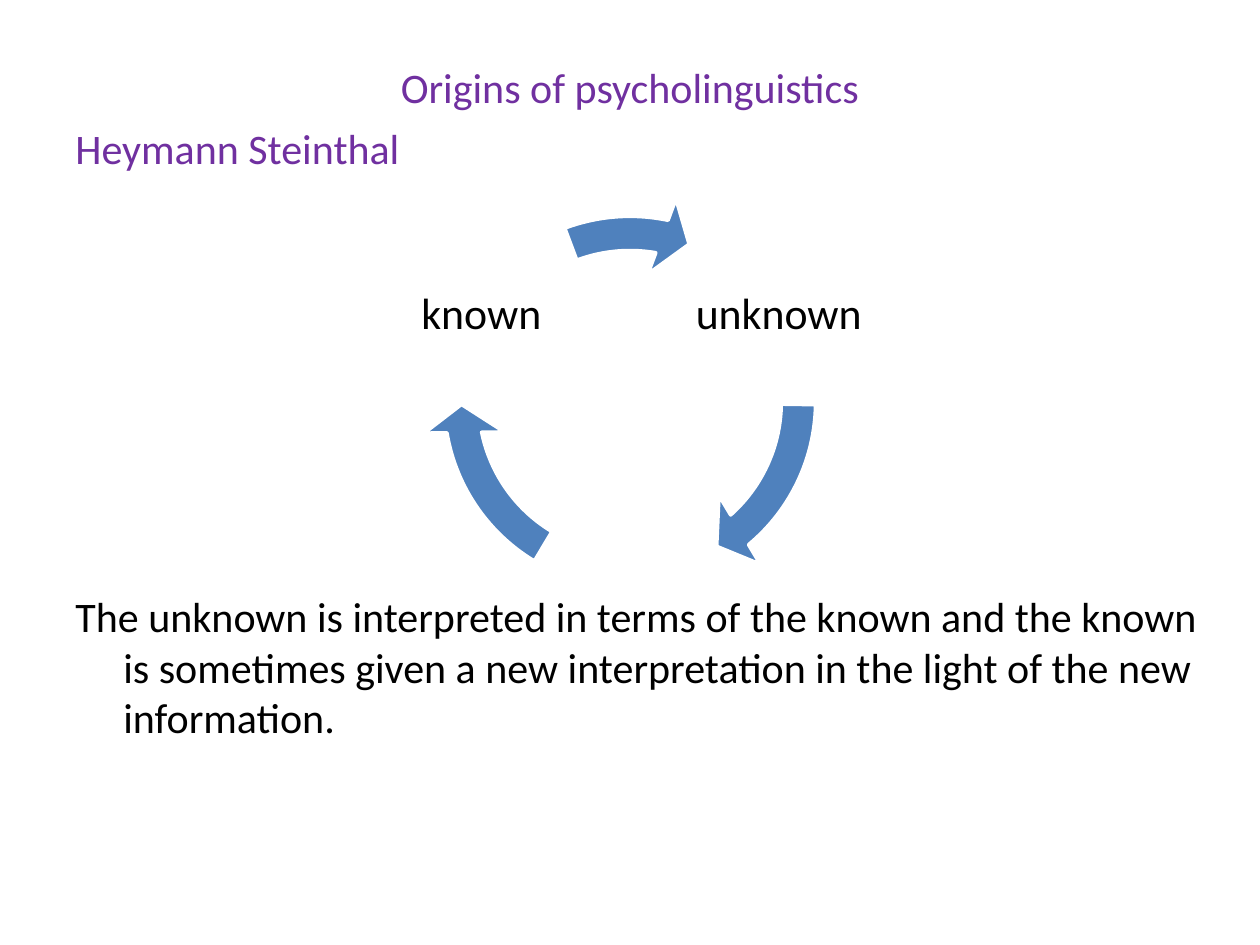
from pptx import Presentation
from pptx.dml.color import RGBColor
from pptx.enum.shapes import MSO_SHAPE
from pptx.enum.text import MSO_ANCHOR, PP_ALIGN
from pptx.util import Inches, Pt

ARROW = MSO_SHAPE.CIRCULAR_ARROW
MIDDLE, TOP = MSO_ANCHOR.MIDDLE, MSO_ANCHOR.TOP
CENTER, LEFT = PP_ALIGN.CENTER, PP_ALIGN.LEFT
FONT = "Calibri"
PURPLE, BLACK, BLUE, WHITE = "7030A0", "000000", "4F81BD", "FFFFFF"

# Content
TITLE = "Origins of psycholinguistics"
# text, colour, space before in points (the gap leaves room for the cycle)
BODY = [
    ("Heymann Steinthal", PURPLE, 0),
    ("The unknown is interpreted in terms of the known and the known is "
     "sometimes given a new interpretation in the light of the new "
     "information.", BLACK, 239),
]
# label, side of the cycle's axis
LABELS = [("known", -1), ("unknown", 1)]
# start and end of each arrow, in degrees clockwise from the right
ARCS = [(0.86, 49.4), (121, 169.54), (249.45, 280.95)]

# Cycle geometry in inches
CENTER_X, CENTER_Y, CYCLE = 5, 3.19, 3.31
LABEL, LABEL_TOP, LABEL_OFFSET = 1.4, 1.8, 1.18
BAND, HEAD_ANGLE, HEAD = 0.082, 9.6, 0.096


def color(value):
    return RGBColor.from_string(value)


def degrees(angle):
    """Angle as a python-pptx adjustment value."""
    return angle * 60000 / 100000


def box(parent, left, top, width, height, inset=None):
    sp = parent.add_textbox(*map(Inches, (left, top, width, height)))
    tf = sp.text_frame
    tf.word_wrap = True
    if inset is not None:
        tf.margin_left = tf.margin_right = Inches(inset)
        tf.margin_top = tf.margin_bottom = Inches(inset)
    return tf


def write(p, text, size, value, align):
    p.alignment = align
    r = p.add_run()
    r.text = text
    r.font.name, r.font.size = FONT, Pt(size)
    r.font.color.rgb = color(value)


prs = Presentation()
prs.slide_width, prs.slide_height = Inches(10), Inches(7.5)
s = prs.slides.add_slide(prs.slide_layouts[5])

# Title
title = s.shapes.title
title.left, title.top = Inches(0.5), Inches(0.3)
title.width, title.height = Inches(9), Inches(0.77)
title.text_frame.vertical_anchor = MIDDLE
write(title.text_frame.paragraphs[0], TITLE, 24, PURPLE, CENTER)

# Body with hanging indents
tf = box(s.shapes, 0.5, 0.92, 9.22, 5.78)
tf.vertical_anchor = TOP
for i, (text, value, gap) in enumerate(BODY):
    p = tf.add_paragraph() if i else tf.paragraphs[0]
    p.space_before = Pt(gap)
    pPr = p._p.get_or_add_pPr()
    pPr.set("marL", str(Inches(0.38)))
    pPr.set("indent", str(-Inches(0.38)))
    write(p, text, 24, value, LEFT)

# Cycle: arrows share one square and differ only in their angles
cycle = s.shapes.add_group_shape()
for start, end in ARCS:
    sp = cycle.shapes.add_shape(
        ARROW, Inches(CENTER_X - CYCLE / 2), Inches(CENTER_Y - CYCLE / 2),
        Inches(CYCLE), Inches(CYCLE))
    sp.shadow.inherit = False
    values = (BAND, degrees(HEAD_ANGLE), degrees(end), degrees(start), HEAD)
    for i, value in enumerate(values):
        sp.adjustments[i] = value
    sp.fill.solid()
    sp.fill.fore_color.rgb = color(BLUE)
    sp.line.color.rgb = color(WHITE)
    sp.line.width = Pt(2)

# Cycle labels, mirrored about the vertical axis
for text, side in LABELS:
    left = CENTER_X + side * LABEL_OFFSET - LABEL / 2
    tf = box(cycle.shapes, left, LABEL_TOP, LABEL, LABEL, 0.03)
    tf.vertical_anchor = MIDDLE
    p = tf.paragraphs[0]
    p.line_spacing = 0.9
    write(p, text, 25, BLACK, CENTER)

prs.save("out.pptx")
